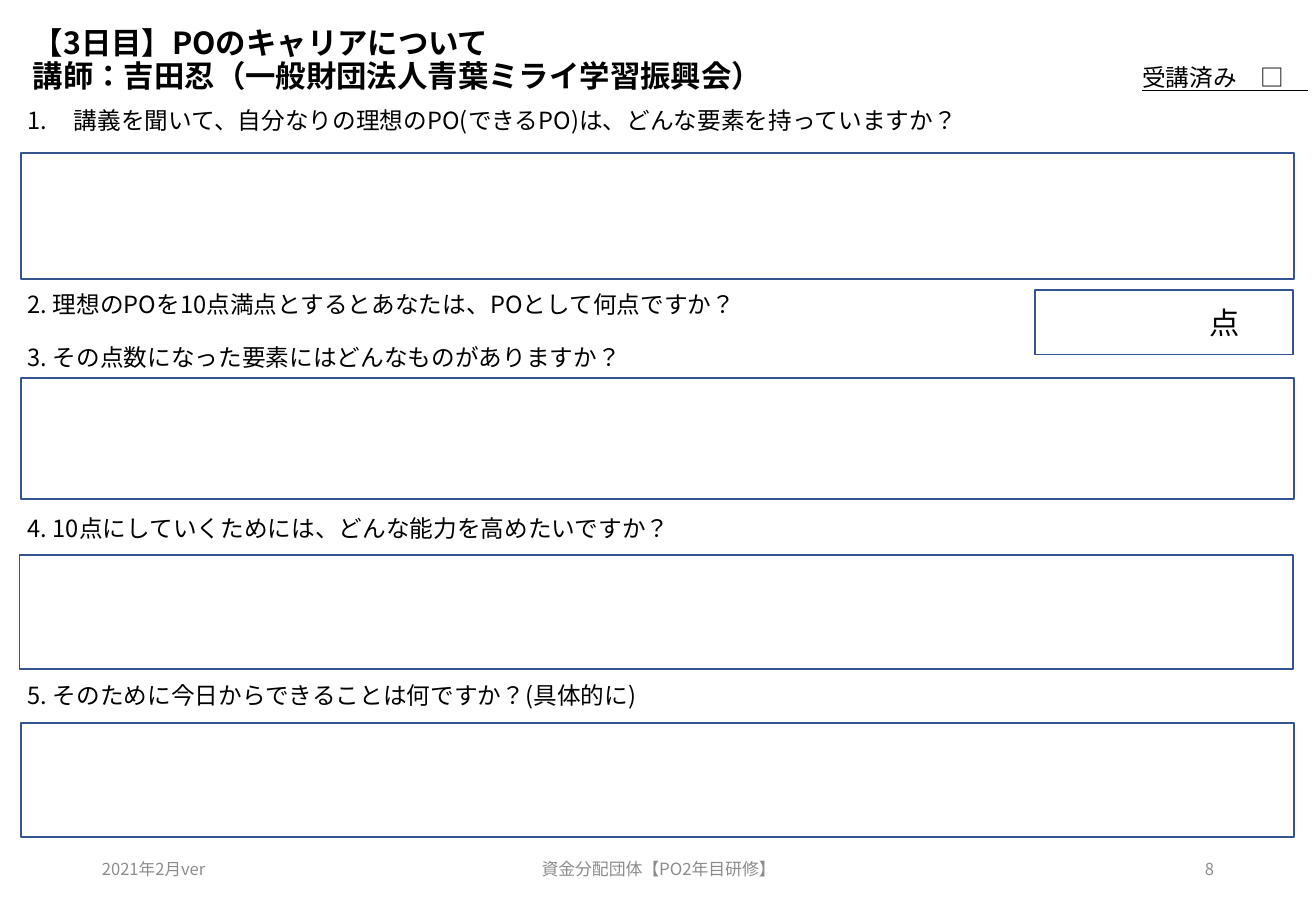
from dataclasses import dataclass

from lxml import etree
from pptx import Presentation
from pptx.dml.color import RGBColor
from pptx.enum.lang import MSO_LANGUAGE_ID
from pptx.enum.shapes import MSO_SHAPE
from pptx.enum.text import MSO_ANCHOR, MSO_AUTO_SIZE, PP_ALIGN
from pptx.oxml.ns import qn
from pptx.util import Emu, Pt

RECTANGLE = MSO_SHAPE.RECTANGLE
JAPANESE = MSO_LANGUAGE_ID.JAPANESE
TOP, MIDDLE = MSO_ANCHOR.TOP, MSO_ANCHOR.MIDDLE
LEFT, CENTER, RIGHT = PP_ALIGN.LEFT, PP_ALIGN.CENTER, PP_ALIGN.RIGHT
NO_FIT, GROW = MSO_AUTO_SIZE.NONE, MSO_AUTO_SIZE.SHAPE_TO_FIT_TEXT
TITLE_ONLY_LAYOUT = 5
EMU_PER_PX = 9144  # 100 px to the inch


@dataclass(frozen=True)
class Theme:
    font: str = "Noto Sans CJK JP"
    text: str = "000000"
    muted: str = "8C8C8C"
    box_fill: str = "FFFFFF"
    box_line: str = "325491"
    title_size: float = 18
    question_size: float = 14
    footer_size: float = 10
    footer_side_size: float = 9.8
    title_pitch: float = 19.5
    line_width: float = 1


THEME = Theme()

TITLE = "【3日目】POのキャリアについて\v講師：吉田忍（一般財団法人青葉ミライ学習振興会）"

# Top edge and wording of each question
NUMBERED_QUESTION = (82, "講義を聞いて、自分なりの理想のPO(できるPO)は、どんな要素を持っていますか？")
QUESTIONS = [
    (234, "2. 理想のPOを10点満点とするとあなたは、POとして何点ですか？"),
    (277, "3. その点数になった要素にはどんなものがありますか？"),
    (418, "4. 10点にしていくためには、どんな能力を高めたいですか？"),
    (556, "5. そのために今日からできることは何ですか？(具体的に)"),
]

# Left, top and height of each answer box
ANSWERS = [(17, 126, 104), (17, 311, 100), (16, 457, 94), (17, 595, 94)]

# Left, width, alignment, type size and wording of each footer part
FOOTERS = [
    (74, 244, LEFT, THEME.footer_side_size, "2021年2月ver"),
    (359, 366, CENTER, THEME.footer_size, "資金分配団体【PO2年目研修】"),
    (765, 244, RIGHT, THEME.footer_side_size, "8"),
]


def px(length):
    return Emu(length * EMU_PER_PX)


def write(frame, text, *, size, color=THEME.text, align=LEFT, anchor=TOP,
          bold=False, underline=False, fit=NO_FIT):
    frame.word_wrap = True
    frame.auto_size = fit
    frame.vertical_anchor = anchor
    frame.text = text
    paragraph = frame.paragraphs[0]
    paragraph.alignment = align
    for run in paragraph.runs:
        font = run.font
        font.size = Pt(size)
        font.bold = bold
        font.underline = underline
        font.color.rgb = RGBColor.from_string(color)
        font.name = THEME.font
        font.language_id = JAPANESE
        east_asian = etree.SubElement(run._r.get_or_add_rPr(), qn("a:ea"))
        east_asian.set("typeface", THEME.font)
    return paragraph


def add_label(slide, left, top, width, height, text, **text_format):
    label = slide.shapes.add_textbox(px(left), px(top), px(width), px(height))
    return write(label.text_frame, text, **text_format)


def add_answer_box(slide, left, top, width, height):
    answer = slide.shapes.add_shape(RECTANGLE, px(left), px(top), px(width), px(height))
    answer.shadow.inherit = False
    answer.fill.solid()
    answer.fill.fore_color.rgb = RGBColor.from_string(THEME.box_fill)
    answer.line.color.rgb = RGBColor.from_string(THEME.box_line)
    answer.line.width = Pt(THEME.line_width)
    return answer


def add_title(slide):
    title = slide.shapes.title
    title.left, title.top, title.width, title.height = px(17), px(10), px(1099), px(111)
    paragraph = write(title.text_frame, TITLE, size=THEME.title_size, bold=True, anchor=MIDDLE)
    paragraph.line_spacing = Pt(THEME.title_pitch)
    title.text_frame.margin_bottom = px(36)


def number_paragraph(paragraph, indent):
    properties = paragraph._p.get_or_add_pPr()
    properties.set("marL", str(px(indent)))
    properties.set("indent", str(px(-indent)))
    etree.SubElement(properties, qn("a:buFont")).set("typeface", THEME.font)
    etree.SubElement(properties, qn("a:buAutoNum")).set("type", "arabicPeriod")


def main():
    deck = Presentation()
    deck.slide_width, deck.slide_height = px(1083), px(750)
    slide = deck.slides.add_slide(deck.slide_layouts[TITLE_ONLY_LAYOUT])

    # Heading and attendance check
    add_title(slide)
    add_label(slide, 930, 47, 201, 34, "受講済み　□　",
              size=THEME.question_size, underline=True, fit=GROW)

    # Answer boxes
    for left, top, height in ANSWERS:
        add_answer_box(slide, left, top, 1048, height)

    # Questions
    top, wording = NUMBERED_QUESTION
    first_question = add_label(slide, 13, top, 1039, 34, wording,
                               size=THEME.question_size, fit=GROW)
    number_paragraph(first_question, 38)
    for top, wording in QUESTIONS:
        add_label(slide, 13, top, 1048, 34, wording, size=THEME.question_size, fit=GROW)

    # Score box
    score = add_answer_box(slide, 852, 239, 212, 53)
    write(score.text_frame, "点", size=THEME.title_size, align=RIGHT, anchor=MIDDLE)
    score.text_frame.margin_right = px(44)

    # Footer
    for left, width, align, size, wording in FOOTERS:
        add_label(slide, left, 695, width, 40, wording, size=size,
                  color=THEME.muted, align=align, anchor=MIDDLE)

    deck.save("out.pptx")


if __name__ == "__main__":
    main()
